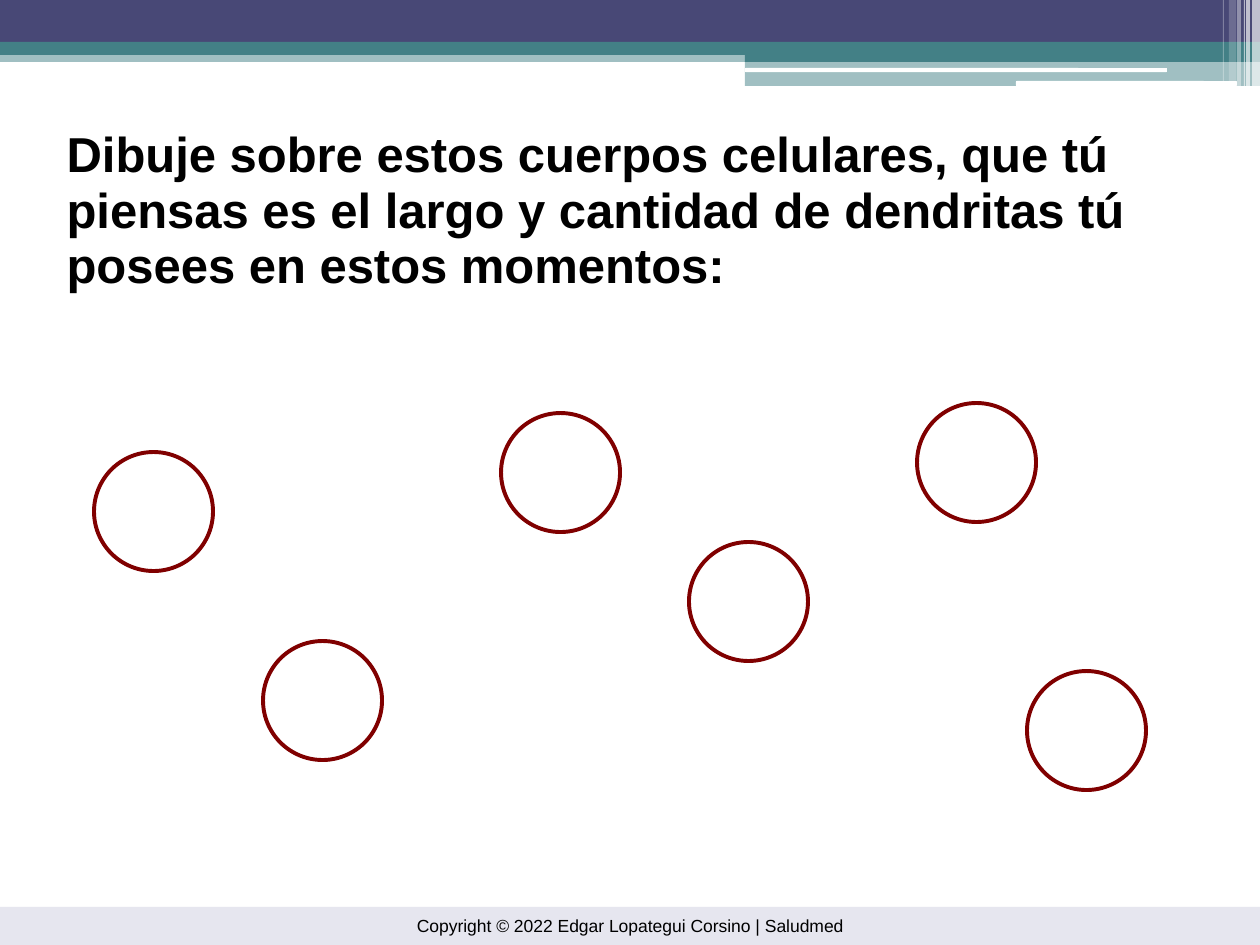
from lxml import etree
from pptx import Presentation
from pptx.dml.color import RGBColor
from pptx.enum.shapes import MSO_SHAPE
from pptx.enum.text import MSO_ANCHOR, MSO_AUTO_SIZE, PP_ALIGN
from pptx.oxml.ns import qn
from pptx.util import Emu, Pt

RECT = MSO_SHAPE.RECTANGLE
ROUNDED = MSO_SHAPE.ROUNDED_RECTANGLE
OVAL = MSO_SHAPE.OVAL
FONT = "Arial"
COLORS = {"indigo": "484876", "teal": "438086", "white": "FFFFFF",
          "lavender": "E6E6EF", "maroon": "800000", "black": "000000"}

# Content
TITLE_LINES = ["Dibuje sobre estos cuerpos celulares, que tú",
               "piensas es el largo y cantidad de dendritas tú",
               "posees en estos momentos:"]
COPYRIGHT = "Copyright © 2022 Edgar Lopategui Corsino | Saludmed"

# Header: preset, left, top, width, height (px), colour, opacity in percent
HEADER_BANDS = [
    (RECT, 0, 50, 1260, 12, "teal", 50),
    (RECT, 0, 0, 1260, 43, "indigo", 100),
    (RECT, 0, 42, 1260, 13, "teal", 100),
    (RECT, 745, 49, 515, 13, "teal", 100),
    (RECT, 745, 61, 515, 25, "teal", 50),
    (ROUNDED, 745, 68, 422, 4, "white", 100),
    (ROUNDED, 1016, 81, 221, 5, "white", 100),
]
# Stripes at the right end: left, width, height (px), opacity
STRIPES = [(1252, 8, 86, 65), (1246, 4, 86, 65), (1244, 1, 86, 60),
           (1237, 4, 86, 40), (1229, 7, 81, 20), (1223, 1, 81, 30)]

# Cell bodies: left, top (px)
CELL_SIZE = 119
CELLS = [(94, 452), (263, 641), (689, 542), (917, 403), (501, 413), (1027, 671)]


def px(n):
    return Emu(round(n * 914400 / 126))


def color(name):
    return RGBColor.from_string(COLORS[name])


def add_shape(slide, preset, left, top, width, height, fill=None, opacity=100):
    shape = slide.shapes.add_shape(preset, px(left), px(top), px(width), px(height))
    shape.shadow.inherit = False
    shape.line.fill.background()
    if fill is None:
        shape.fill.background()
        return shape
    shape.fill.solid()
    shape.fill.fore_color.rgb = color(fill)
    if opacity < 100:
        tint = shape.fill._xPr.find(".//" + qn("a:srgbClr"))
        etree.SubElement(tint, qn("a:alpha")).set("val", str(opacity * 1000))
    return shape


def add_run(paragraph, text, size, bold=False):
    run = paragraph.add_run()
    run.text = text
    run.font.name = FONT
    run.font.size = Pt(size)
    run.font.bold = bold
    run.font.color.rgb = color("black")


def build():
    prs = Presentation()
    prs.slide_width, prs.slide_height = px(1260), px(945)
    slide = prs.slides.add_slide(prs.slide_layouts[5])

    # Header bands and stripes
    for band in HEADER_BANDS:
        add_shape(slide, *band)
    for left, width, height, opacity in STRIPES:
        add_shape(slide, RECT, left, 0, width, height, "white", opacity)

    # Footer
    footer = add_shape(slide, RECT, 0, 907, 1260, 38, "lavender").text_frame
    footer.vertical_anchor = MSO_ANCHOR.MIDDLE
    footer.paragraphs[0].alignment = PP_ALIGN.CENTER
    add_run(footer.paragraphs[0], COPYRIGHT, 10)

    # Title
    title = slide.shapes.title
    title.left, title.top, title.width, title.height = px(54), px(124), px(1142), px(171)
    frame = title.text_frame
    frame.word_wrap = True
    frame.auto_size = MSO_AUTO_SIZE.NONE
    frame.vertical_anchor = MSO_ANCHOR.TOP
    for i, line in enumerate(TITLE_LINES):
        paragraph = frame.add_paragraph() if i else frame.paragraphs[0]
        paragraph.alignment = PP_ALIGN.LEFT
        paragraph.line_spacing = 0.9
        paragraph.space_before = Pt(1.4 if i else 0)
        indent = px(53)
        paragraph._p.get_or_add_pPr().set("marL", str(indent))
        paragraph._p.get_or_add_pPr().set("indent", str(-indent))
        add_run(paragraph, line, 28, bold=True)

    # Cell bodies
    for left, top in CELLS:
        cell = add_shape(slide, OVAL, left, top, CELL_SIZE, CELL_SIZE)
        cell.line.color.rgb = color("maroon")
        cell.line.width = Pt(2.25)

    prs.save("out.pptx")


if __name__ == "__main__":
    build()
